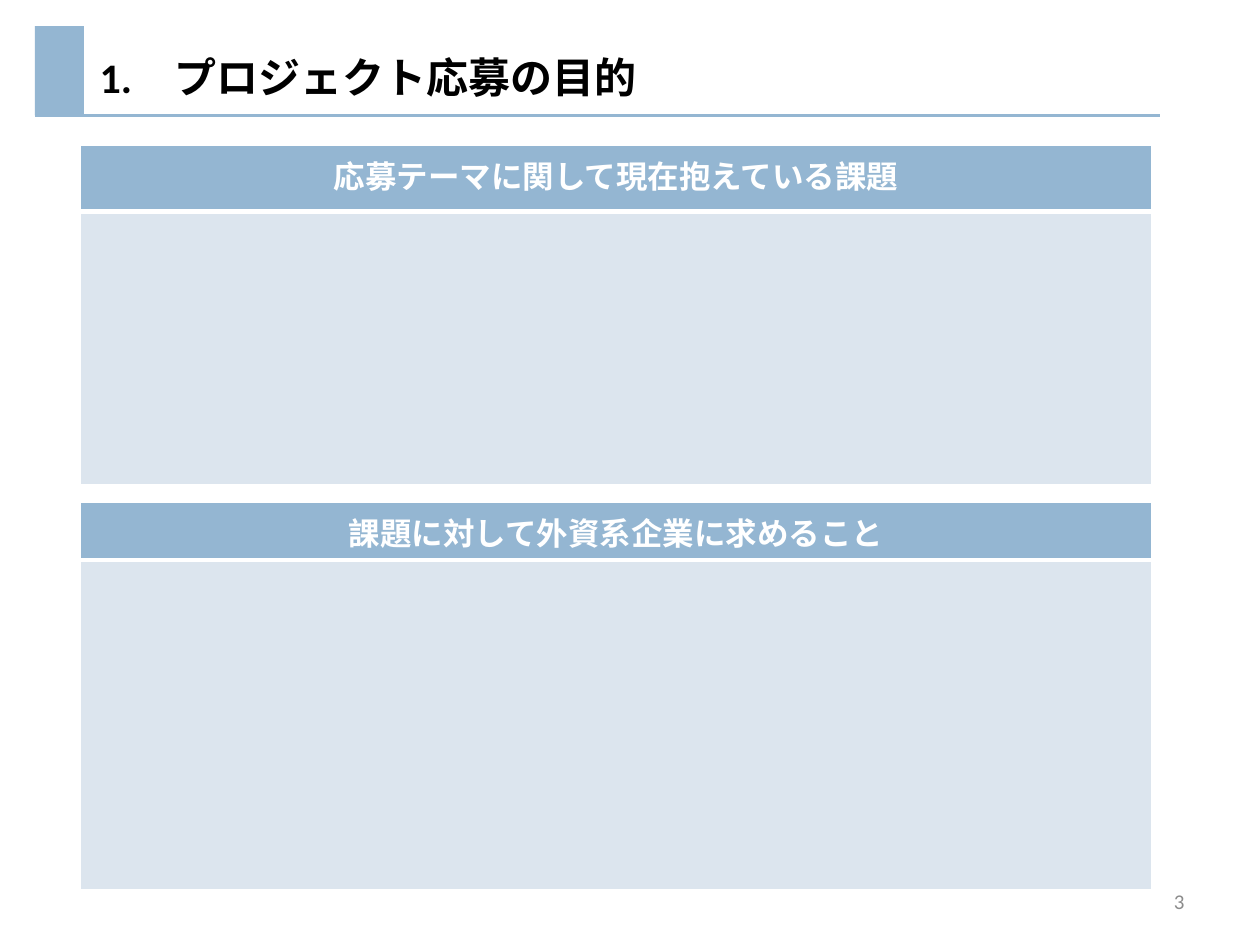
from lxml import etree
from pptx import Presentation
from pptx.dml.color import RGBColor
from pptx.enum import shapes, text
from pptx.oxml import ns
from pptx.util import Pt


class Theme:
    font = "Calibri"
    blue = RGBColor.from_string("94B6D2")
    pale = RGBColor.from_string("DCE5EE")
    white = RGBColor.from_string("FFFFFF")
    black = RGBColor.from_string("000000")
    gray = RGBColor.from_string("8C8C8C")
    title = 24
    head = 18
    page = 12


def style(para, size, color, bold, align):
    para.alignment = align
    font = para.font
    font.name, font.size, font.bold = Theme.font, Pt(size), bold
    font.color.rgb = color


def border(cell, widths):
    """Draw white cell borders; widths maps each side to points."""
    props = cell._tc.get_or_add_tcPr()
    for spot, (side, width) in enumerate(widths.items()):
        line = etree.Element(ns.qn(f"a:ln{side}"), w=str(Pt(width)))
        fill = etree.SubElement(line, ns.qn("a:solidFill"))
        etree.SubElement(fill, ns.qn("a:srgbClr"), val=str(Theme.white))
        props.insert(spot, line)


deck = Presentation()
deck.slide_width, deck.slide_height = Pt(720), Pt(540)
slide = deck.slides.add_slide(deck.slide_layouts[5])
align = text.PP_ALIGN

# Title
title = slide.shapes.title
title.left, title.top, title.width, title.height = Pt(49.7), Pt(24.5), Pt(497), Pt(39)
title.text_frame.text = "1.　プロジェクト応募の目的"
title.text_frame.vertical_anchor = text.MSO_ANCHOR.MIDDLE
style(title.text_frame.paragraphs[0], Theme.title, Theme.black, True, align.LEFT)

# Rule and block beside the title
rule = slide.shapes.add_connector(
    shapes.MSO_CONNECTOR.STRAIGHT, Pt(20), Pt(66), Pt(663), Pt(66))
rule.line.color.rgb = Theme.blue
rule.line.width = Pt(2)
etree.SubElement(rule._element.spPr, ns.qn("a:effectLst"))

block = slide.shapes.add_shape(
    shapes.MSO_SHAPE.RECTANGLE, Pt(20), Pt(15), Pt(28), Pt(51))
block.shadow.inherit = False
block.fill.solid()
block.fill.fore_color.rgb = Theme.blue
block.line.fill.background()

# Page number
page = slide.shapes.add_textbox(Pt(516), Pt(500.5), Pt(168), Pt(29))
page.text_frame.word_wrap = True
page.text_frame.vertical_anchor = text.MSO_ANCHOR.MIDDLE
page.text_frame.text = "3"
style(page.text_frame.paragraphs[0], Theme.page, Theme.gray, False, align.RIGHT)

# Answer boxes: a heading row over an empty row
boxes = [
    ("応募テーマに関して現在抱えている課題", 83, 37.8, 156),
    ("課題に対して外資系企業に求めること", 287, 33, 188.5),
]
for label, top, high, low in boxes:
    table = slide.shapes.add_table(
        2, 1, Pt(46), Pt(top), Pt(612), Pt(high + low)).table
    table.rows[0].height, table.rows[1].height = Pt(high), Pt(low)
    head, body = table.cell(0, 0), table.cell(1, 0)
    for cell, color in ((head, Theme.blue), (body, Theme.pale)):
        cell.fill.solid()
        cell.fill.fore_color.rgb = color
    border(head, {"L": 1, "R": 1, "T": 1, "B": 3})
    border(body, {"L": 1, "R": 1, "T": 3, "B": 1})
    head.text = label
    style(head.text_frame.paragraphs[0], Theme.head, Theme.white, True, align.CENTER)

deck.save("out.pptx")
